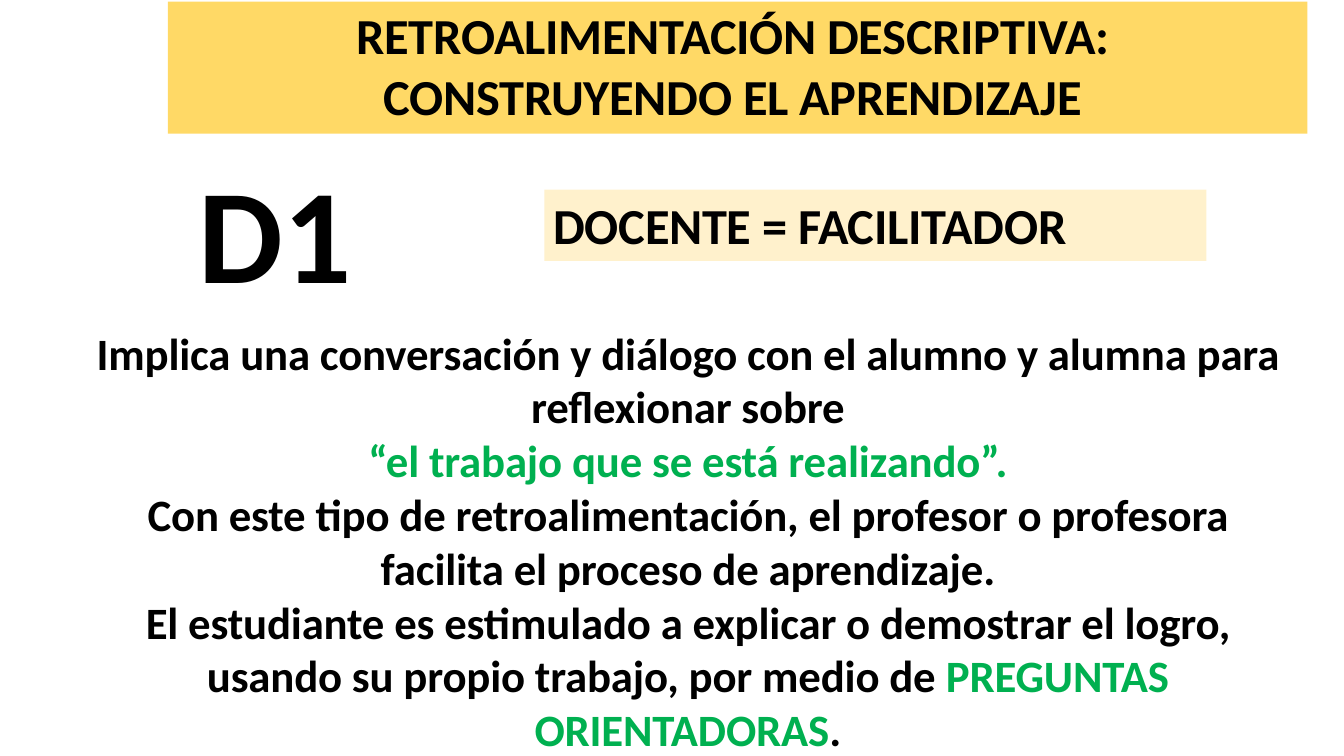
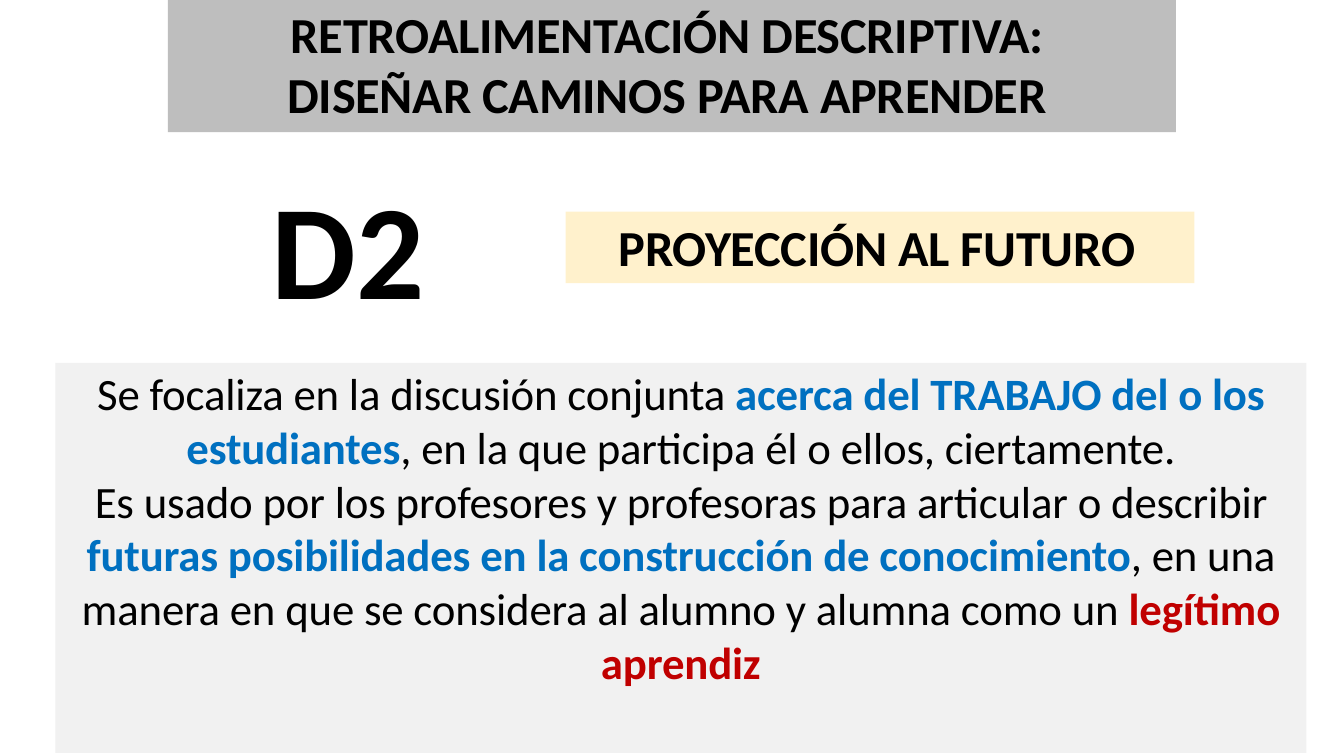
from pptx import Presentation
from pptx.dml.color import RGBColor
from pptx.enum.shapes import MSO_SHAPE as Shape
from pptx.enum.text import MSO_ANCHOR as Anchor, PP_ALIGN as Align
from pptx.util import Pt

# Shared colours
BLACK, GREEN, BLUE, RED = "000000", "00B050", "0070C0", "C00000"
GOLD, GREY, CREAM, PALE = "FFD966", "BEBEBE", "FFF1CC", "F1F1F1"

# Shared styles: font size, alignment, letter spacing (1/100 pt), insets (left, top, right)
STYLES = {
    "title": dict(size=36, align=Align.CENTER, track=-20, inset=(0, 2, 7)),
    "label": dict(size=36, align=Align.LEFT, track=-20, inset=(0, 3, 0)),
    "badge": dict(size=96, align=Align.LEFT, track=-10, inset=(1, 2, 0)),
    "body": dict(size=32, align=Align.CENTER, track=-15, inset=(0, 2, 0)),
}

# Content: each part is style, box (left, top, width, height), fill, left and
# right padding, paragraphs; each paragraph is a list of (text, colour, bold)
SLIDES = [
    [
        ("title", (120, 1.2, 814, 94.4), GOLD, 0, [
            [("RETROALIMENTACIÓN DESCRIPTIVA:", BLACK, True)],
            [("CONSTRUYENDO EL APRENDIZAJE", BLACK, True)]]),
        ("label", (388.8, 135.4, 473, 51), CREAM, 6.5, [
            [("DOCENTE = FACILITADOR", BLACK, True)]]),
        ("body", (64.8, 230.4, 853.2, 308.8), None, 0, [
            [("Implica una conversación y diálogo con el alumno y alumna "
              "para reflexionar sobre", BLACK, True)],
            [("“el trabajo que se está realizando”.", GREEN, True)],
            [("Con este tipo de retroalimentación, el profesor o profesora "
              "facilita el proceso de aprendizaje.", BLACK, True)],
            [("El estudiante es estimulado a explicar o demostrar el logro, "
              "usando su propio trabajo, por medio de ", BLACK, True),
             ("PREGUNTAS ORIENTADORAS", GREEN, True),
             (".", BLACK, True)]]),
        ("badge", (141, 104.4, 111, 117.4), None, 0, [[("D1", BLACK, True)]]),
    ],
    [
        ("title", (120, 0, 720, 94.4), GREY, 0, [
            [("RETROALIMENTACIÓN DESCRIPTIVA:", BLACK, True)],
            [("DISEÑAR CAMINOS PARA APRENDER", BLACK, True)]]),
        ("body", (39.6, 259.2, 893.6, 278.6), PALE, 14, [
            [("Se focaliza en la discusión conjunta ", BLACK, False),
             ("acerca del TRABAJO del o los estudiantes", BLUE, True),
             (", en la que participa él o ellos, ciertamente.", BLACK, False)],
            [("Es usado por los profesores y profesoras para articular o "
              "describir ", BLACK, False),
             ("futuras posibilidades en la construcción de conocimiento", BLUE, True),
             (", en una manera en que se considera al alumno y alumna como un ",
              BLACK, False),
             ("legítimo aprendiz", RED, True)]]),
        ("badge", (193, 116, 111, 117.4), None, 0, [[("D2", BLACK, True)]]),
        ("label", (404, 151.2, 449.2, 51), CREAM, 38, [
            [("PROYECCIÓN AL FUTURO", BLACK, True)]]),
    ],
]


def paint(target, tone):
    target.rgb = RGBColor.from_string(tone)


def add_box(slide, box, fill):
    """Add a filled rectangle, or a plain text box when there is no fill."""
    place = [Pt(n) for n in box]
    if not fill:
        return slide.shapes.add_textbox(*place)
    shape = slide.shapes.add_shape(Shape.RECTANGLE, *place)
    shape.shadow.inherit = False
    shape.line.fill.background()
    shape.fill.solid()
    paint(shape.fill.fore_color, fill)
    return shape


def add_text(shape, style, pad, paras):
    left, top, right = style["inset"]
    frame = shape.text_frame
    form = dict(word_wrap=True, vertical_anchor=Anchor.TOP,
                margin_left=Pt(left + pad), margin_top=Pt(top),
                margin_right=Pt(right + pad), margin_bottom=0)
    for name, value in form.items():
        setattr(frame, name, value)
    for i, parts in enumerate(paras):
        para = frame.add_paragraph() if i else frame.paragraphs[0]
        para.alignment = style["align"]
        for text, tone, bold in parts:
            run = para.add_run()
            run.text = text
            face = dict(name="Calibri", size=Pt(style["size"]), bold=bold)
            for name, value in face.items():
                setattr(run.font, name, value)
            paint(run.font.color, tone)
            # Letter spacing has no public setter
            run._r.get_or_add_rPr().set("spc", str(style["track"]))


def main():
    deck = Presentation()
    deck.slide_width, deck.slide_height = Pt(960), Pt(540)
    for parts in SLIDES:
        slide = deck.slides.add_slide(deck.slide_layouts[6])
        for kind, box, fill, pad, paras in parts:
            add_text(add_box(slide, box, fill), STYLES[kind], pad, paras)
    deck.save("out.pptx")


if __name__ == "__main__":
    main()
